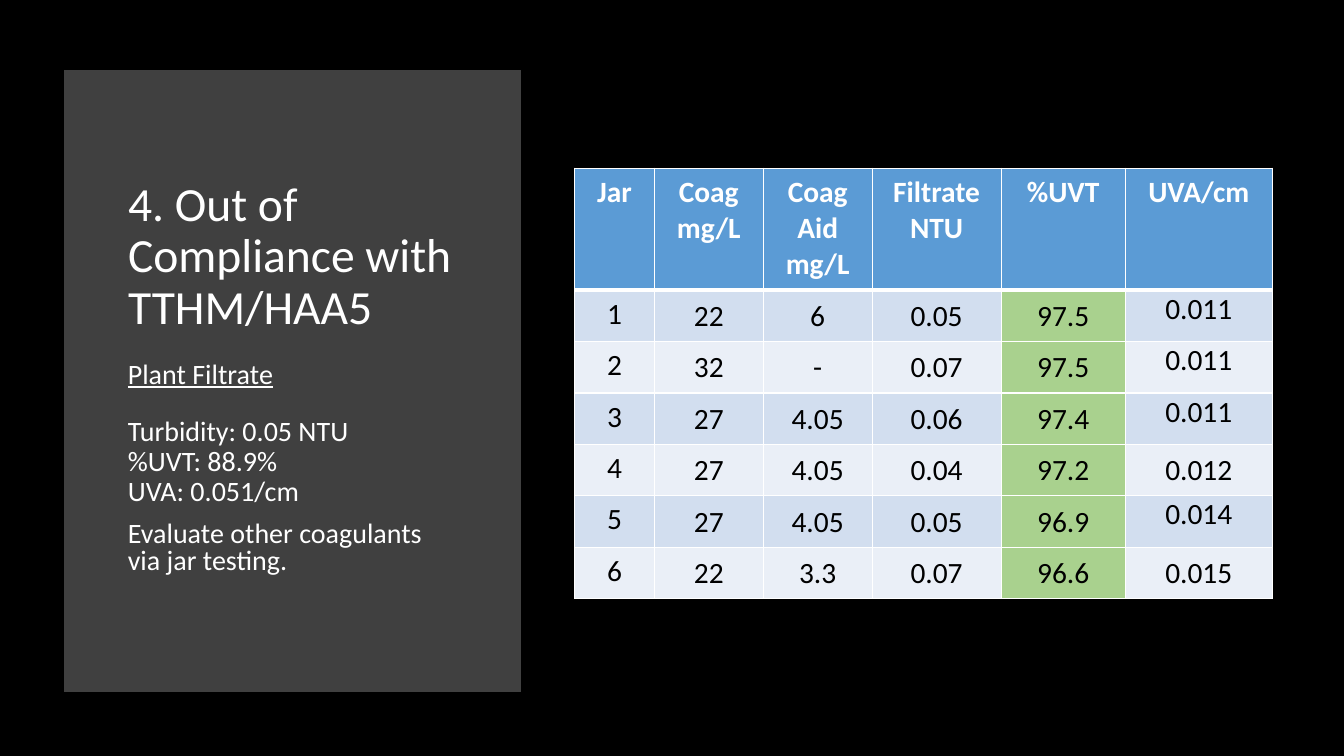
from lxml.etree import SubElement
from pptx import Presentation
from pptx.dml.color import RGBColor
from pptx.enum.shapes import MSO_SHAPE as Shape
from pptx.enum.text import MSO_ANCHOR as Anchor, MSO_AUTO_SIZE as AutoSize, PP_ALIGN as Align
from pptx.oxml.ns import qn
from pptx.util import Inches, Pt

BLACK, WHITE, GRAY = "000000", "FFFFFF", "404040"
HEADER_BLUE, GREEN = "5B9BD5", "A9D18E"
BANDS = ("D2DEEF", "EAEFF7")

COLUMN_WIDTHS = (0.79, 1.08, 1.08, 1.28, 1.23, 1.46)
HEADER_HEIGHT, ROW_HEIGHT = 1.21, 0.51
UVT_COLUMN, UVA_COLUMN = 4, 5
TOP_UVA_JARS = ("1", "2", "3", "5")
WIDE_MARGINS = (0.12, 0.06, 0.12, 0.06)
TIGHT_MARGINS = (0.01, 0.01, 0.01, 0)

HEADERS = ("Jar", "Coag\nmg/L", "Coag Aid\nmg/L", "Filtrate\nNTU", "%UVT", "UVA/cm")
JARS = (
    ("1", "22", "6", "0.05", "97.5", "0.011"),
    ("2", "32", "-", "0.07", "97.5", "0.011"),
    ("3", "27", "4.05", "0.06", "97.4", "0.011"),
    ("4", "27", "4.05", "0.04", "97.2", "0.012"),
    ("5", "27", "4.05", "0.05", "96.9", "0.014"),
    ("6", "22", "3.3", "0.07", "96.6", "0.015"),
)


def paint(fill, color):
    fill.solid()
    fill.fore_color.rgb = RGBColor.from_string(color)


def write(para, text, size=20, color=WHITE, bold=False, underline=False,
          align=Align.LEFT, spacing=1.0, before=0):
    para.alignment = align
    para.line_spacing = spacing
    para.space_before = Pt(before)
    span = para.add_run()
    span.text = text
    font = span.font
    font.name, font.size = "Calibri", Pt(size)
    font.bold, font.underline = bold, underline
    font.color.rgb = RGBColor.from_string(color)


def place(box, left, top, width, height):
    box.left, box.top = Inches(left), Inches(top)
    box.width, box.height = Inches(width), Inches(height)


def add_panel(page):
    panel = page.shapes.add_shape(Shape.RECTANGLE, Inches(0.7), Inches(0.76),
                                  Inches(4.4), Inches(6.04))
    panel.shadow.inherit = False
    paint(panel.fill, GRAY)
    paint(panel.line.fill, GRAY)
    panel.line.width = Pt(10)
    SubElement(panel.line.fill._xPr, qn("a:miter"), lim="800000")


def add_title(page):
    title = page.shapes.title
    place(title, 1.17, 1.11, 3.44, 2.26)
    frame = title.text_frame
    frame.word_wrap, frame.auto_size = True, AutoSize.NONE
    frame.vertical_anchor = Anchor.BOTTOM
    write(frame.paragraphs[0], "4. Out of Compliance with TTHM/HAA5", size=34, spacing=0.9)
    page.shapes._spTree.append(title._element)  # in front of the panel


def add_plant_notes(page):
    box = page.shapes.add_textbox(Inches(1.17), Inches(3.55), Inches(3.44), Inches(2.44))
    frame = box.text_frame
    frame.word_wrap = True
    write(frame.paragraphs[0], "Plant Filtrate", underline=True, spacing=0.8)
    for text, spacing, before in (
        ("Turbidity: 0.05 NTU", 0.9, 19.5),
        ("%UVT: 88.9%", 0.9, 0),
        ("UVA: 0.051/cm", 0.9, 0),
        ("Evaluate other coagulants via jar testing.", 0.8, 10),
    ):
        write(frame.add_paragraph(), text, spacing=spacing, before=before)


def add_borders(cell, bottom=1):
    properties = cell._tc.get_or_add_tcPr()
    for side, width in (("L", 1), ("R", 1), ("T", 1), ("B", bottom)):
        line = SubElement(properties, qn(f"a:ln{side}"), w=str(Pt(width)))
        SubElement(SubElement(line, qn("a:solidFill")), qn("a:srgbClr"), val=WHITE)


def format_cell(cell, text, fill, margins=WIDE_MARGINS, anchor=Anchor.TOP,
                bottom=1, **text_format):
    add_borders(cell, bottom)
    paint(cell.fill, fill)
    cell.vertical_anchor = anchor
    (cell.margin_left, cell.margin_top,
     cell.margin_right, cell.margin_bottom) = map(Inches, margins)
    frame = cell.text_frame
    for index, line in enumerate(text.split("\n")):
        para = frame.add_paragraph() if index else frame.paragraphs[0]
        write(para, line, size=21, align=Align.CENTER, **text_format)


def add_jar_table(page):
    heights = [HEADER_HEIGHT] + [ROW_HEIGHT] * len(JARS)
    table = page.shapes.add_table(
        len(heights), len(HEADERS), Inches(5.7), Inches(1.67),
        Inches(sum(COLUMN_WIDTHS)), Inches(sum(heights))).table
    for column, width in zip(table.columns, COLUMN_WIDTHS):
        column.width = Inches(width)
    for row, height in zip(table.rows, heights):
        row.height = Inches(height)
    for index, text in enumerate(HEADERS):
        format_cell(table.cell(0, index), text, HEADER_BLUE, bottom=3, bold=True)
    for row, jar in enumerate(JARS, start=1):
        band = BANDS[(row - 1) % 2]
        for index, text in enumerate(jar):
            at_top = index == 0 or (index == UVA_COLUMN and jar[0] in TOP_UVA_JARS)
            format_cell(table.cell(row, index), text,
                        GREEN if index == UVT_COLUMN else band,
                        margins=TIGHT_MARGINS if index else WIDE_MARGINS,
                        anchor=Anchor.TOP if at_top else Anchor.MIDDLE,
                        color=BLACK)


def main():
    deck = Presentation()
    deck.slide_width, deck.slide_height = Inches(13.33), Inches(7.5)
    page = deck.slides.add_slide(deck.slide_layouts[5])
    paint(page.background.fill, BLACK)
    add_panel(page)
    add_title(page)
    add_plant_notes(page)
    add_jar_table(page)
    deck.save("out.pptx")


if __name__ == "__main__":
    main()
